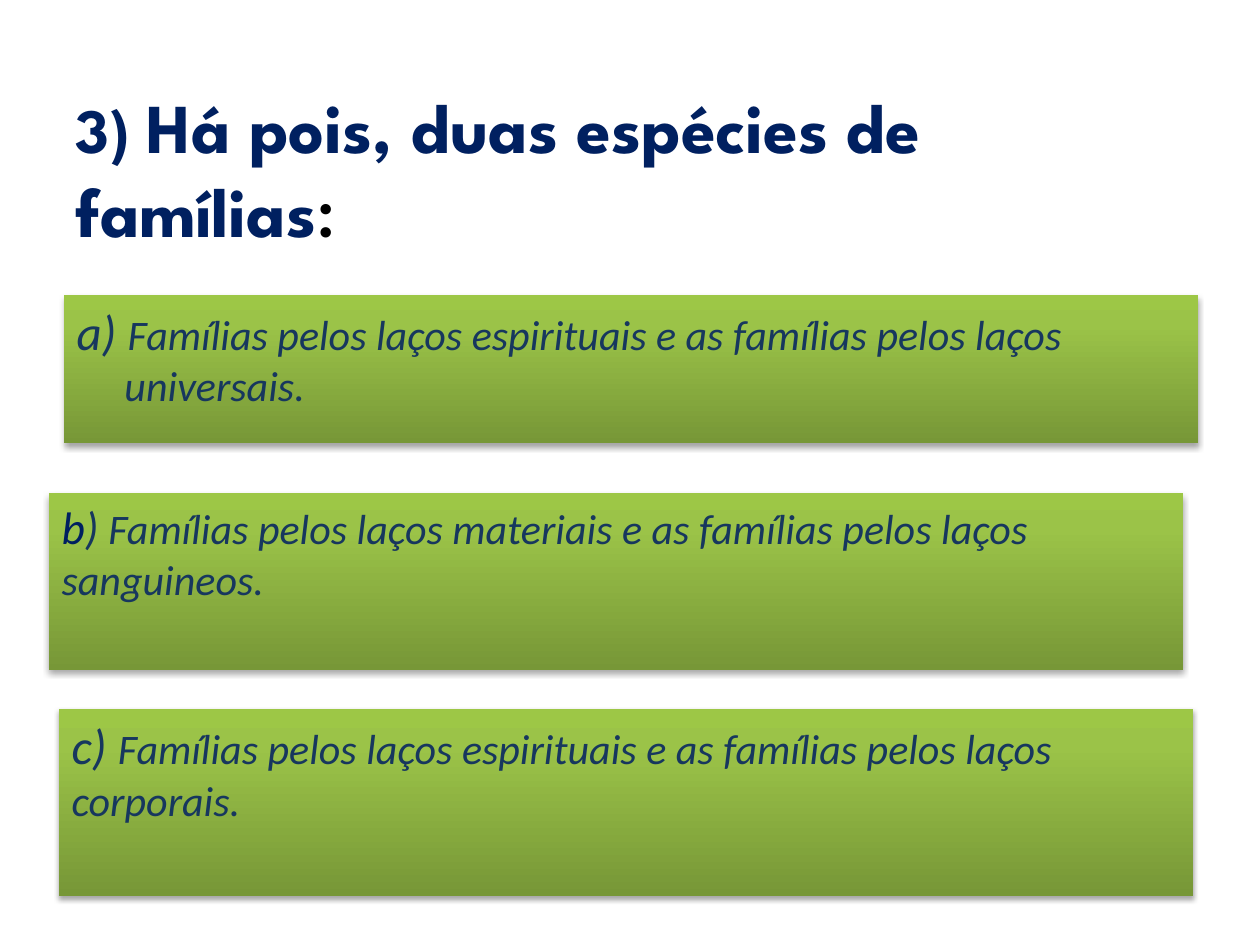
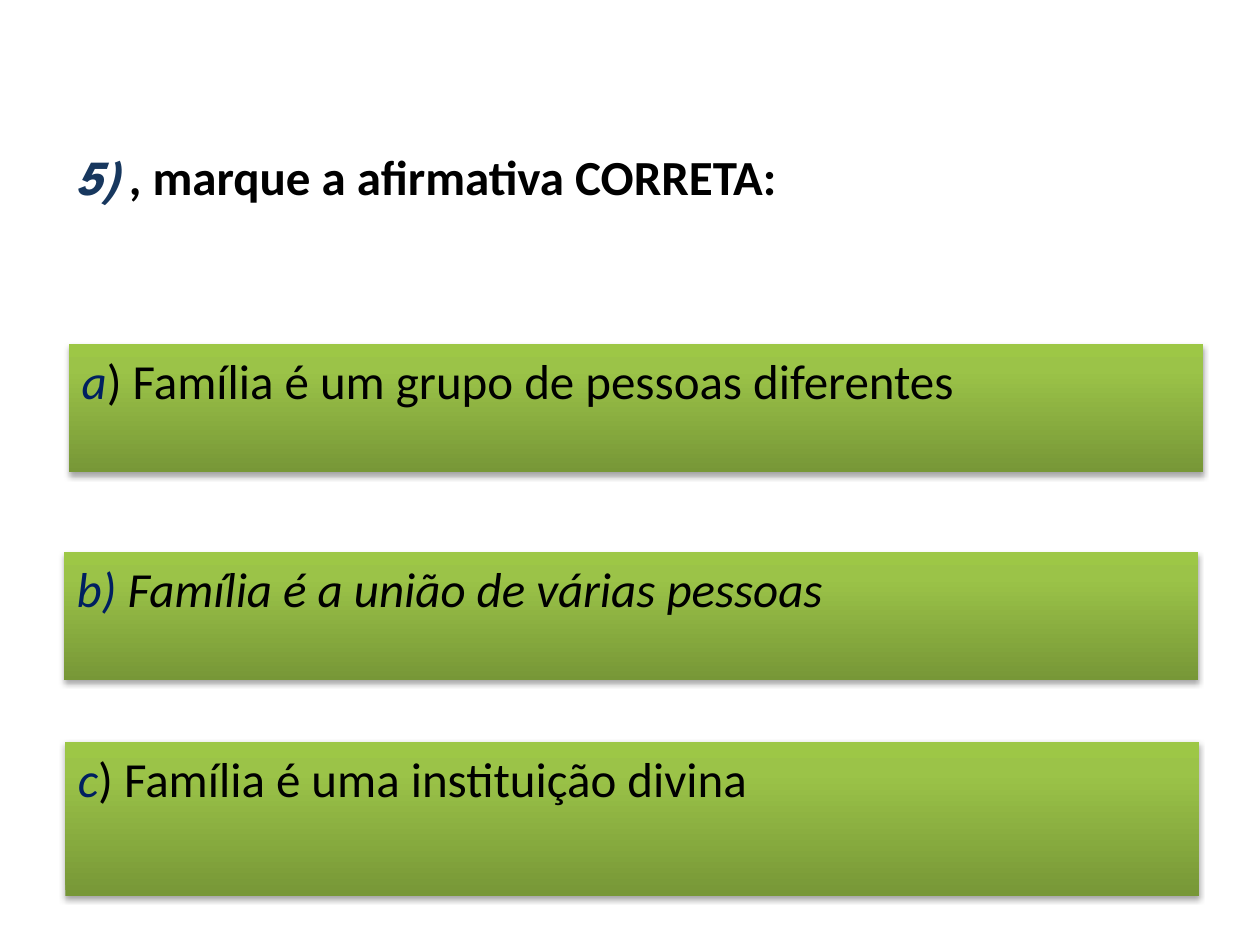
from copy import deepcopy
from dataclasses import dataclass

from lxml.etree import SubElement
from pptx import Presentation
from pptx.dml.color import RGBColor
from pptx.enum.shapes import MSO_SHAPE
from pptx.enum.text import MSO_ANCHOR, MSO_AUTO_SIZE, PP_ALIGN
from pptx.oxml.ns import qn
from pptx.util import Pt

PX = 9144


@dataclass(frozen=True)
class Theme:
    """Colours, fonts and type sizes shared by the slides."""
    navy: str = "002060"
    blue: str = "17375E"
    black: str = "000000"
    gradient: tuple = ((0, "779737"), (0.8, "9BC348"), (1, "9DC746"))
    display: str = "League Spartan"
    plain: str = "Calibri"
    heading: int = 40
    number: int = 36
    large: int = 28
    medium: int = 26
    small: int = 24


def write(frame, runs, anchor=MSO_ANCHOR.TOP, align=PP_ALIGN.LEFT, before=0, hanging=0):
    """Fill a text frame with one paragraph of (text, font format) runs."""
    frame.word_wrap = True
    frame.auto_size = MSO_AUTO_SIZE.NONE
    frame.vertical_anchor = anchor
    paragraph = frame.paragraphs[0]
    paragraph.alignment = align
    properties = paragraph._p.get_or_add_pPr()
    if hanging:
        properties.set("marL", str(hanging * PX))
        properties.set("indent", str(-hanging * PX))
    spacing = SubElement(properties, qn("a:spcBef"))
    SubElement(spacing, qn("a:spcPct"), val=str(before * 1000))
    for text, look in runs:
        run = paragraph.add_run()
        run.text = text
        run.font.name = look["font"]
        run.font.size = Pt(look["size"])
        run.font.color.rgb = RGBColor.from_string(look["color"])
        run.font.bold = look.get("bold", False)
        run.font.italic = look.get("italic", False)


class Quiz:
    """Holds the theme and the slide being built."""

    def __init__(self, theme):
        self.theme = theme
        self.deck = Presentation()
        self.deck.slide_width, self.deck.slide_height = 1000 * PX, 750 * PX
        self.slide = None

    def look(self, size, color, font=None, **format):
        """Describe the font of a run, in the plain font unless told otherwise."""
        return dict(size=size, color=color, font=font or self.theme.plain, **format)

    def question(self, top, height, runs, align=PP_ALIGN.LEFT):
        """Start a slide whose title asks the question."""
        self.slide = self.deck.slides.add_slide(self.deck.slide_layouts[5])
        title = self.slide.shapes.title
        title.left, title.top, title.width, title.height = (
            v * PX for v in (50, top, 900, height))
        write(title.text_frame, runs, anchor=MSO_ANCHOR.MIDDLE, align=align)

    def answer(self, left, top, height, runs, hanging=0):
        """Add a green answer box."""
        box = self.slide.shapes.add_shape(
            MSO_SHAPE.RECTANGLE, *(v * PX for v in (left, top, 900, height)))
        box.line.fill.background()
        self.shade(box)
        self.cast_shadow(box)
        write(box.text_frame, runs, before=20, hanging=hanging)

    def shade(self, box):
        """Fill a box with the theme gradient, dark at the bottom."""
        box.fill.gradient()
        box.fill.gradient_angle = 90
        stops = box._element.spPr.find(".//" + qn("a:gsLst"))
        stops.append(deepcopy(stops[-1]))
        for stop, (position, color) in zip(box.fill.gradient_stops, self.theme.gradient):
            stop.position = position
            stop.color.rgb = RGBColor.from_string(color)

    def cast_shadow(self, box):
        """Give a box a soft shadow below it."""
        box.shadow.inherit = False
        effects = box._element.spPr.find(qn("a:effectLst"))
        shadow = SubElement(effects, qn("a:outerShdw"), blurRad="40000", dist="23000",
                            dir="5400000", rotWithShape="0")
        color = SubElement(shadow, qn("a:srgbClr"), val=self.theme.black)
        SubElement(color, qn("a:alpha"), val="35000")


def main():
    """Build both question slides."""
    theme = Theme()
    quiz = Quiz(theme)
    look = quiz.look

    quiz.question(47, 172, [
        ("3) ", look(theme.number, theme.navy, theme.display, bold=True)),
        ("Há pois, duas espécies de famílias",
         look(theme.heading, theme.navy, theme.display, bold=True)),
        (":", look(theme.heading, theme.black, bold=True))])
    letter = look(theme.large, theme.blue, italic=True)
    phrase = look(theme.small, theme.blue, italic=True)
    quiz.answer(51, 234, 118, [
        ("a) ", letter),
        ("Famílias pelos laços espirituais e as famílias pelos laços universais.", phrase)],
        hanging=38)
    quiz.answer(39, 391, 141, [
        ("b", look(theme.medium, theme.navy, italic=True)),
        (")", look(theme.medium, theme.blue, italic=True)),
        (" Famílias pelos laços materiais e as famílias pelos laços sanguineos.", phrase)])
    quiz.answer(47, 563, 148, [
        ("c) ", letter),
        ("Famílias pelos laços espirituais e as famílias pelos laços corporais.", phrase)])

    quiz.question(30, 220, [
        ("5)", look(theme.large, theme.blue, theme.display, bold=True, italic=True)),
        (" , marque a afirmativa CORRETA:", look(theme.large, theme.black, bold=True))],
        align=PP_ALIGN.JUSTIFY)
    letter = look(theme.large, theme.navy, italic=True)
    for left, top, height, mark, phrase, italic in (
            (55, 273, 102, "a", ") Família é um grupo de pessoas diferentes", False),
            (51, 438, 102, "b) ", "Família é a união de várias pessoas", True),
            (52, 589, 122, "c", ") Família é uma instituição divina", False)):
        quiz.answer(left, top, height, [
            (mark, letter), (phrase, look(theme.large, theme.black, italic=italic))])

    quiz.deck.save("out.pptx")


if __name__ == "__main__":
    main()
